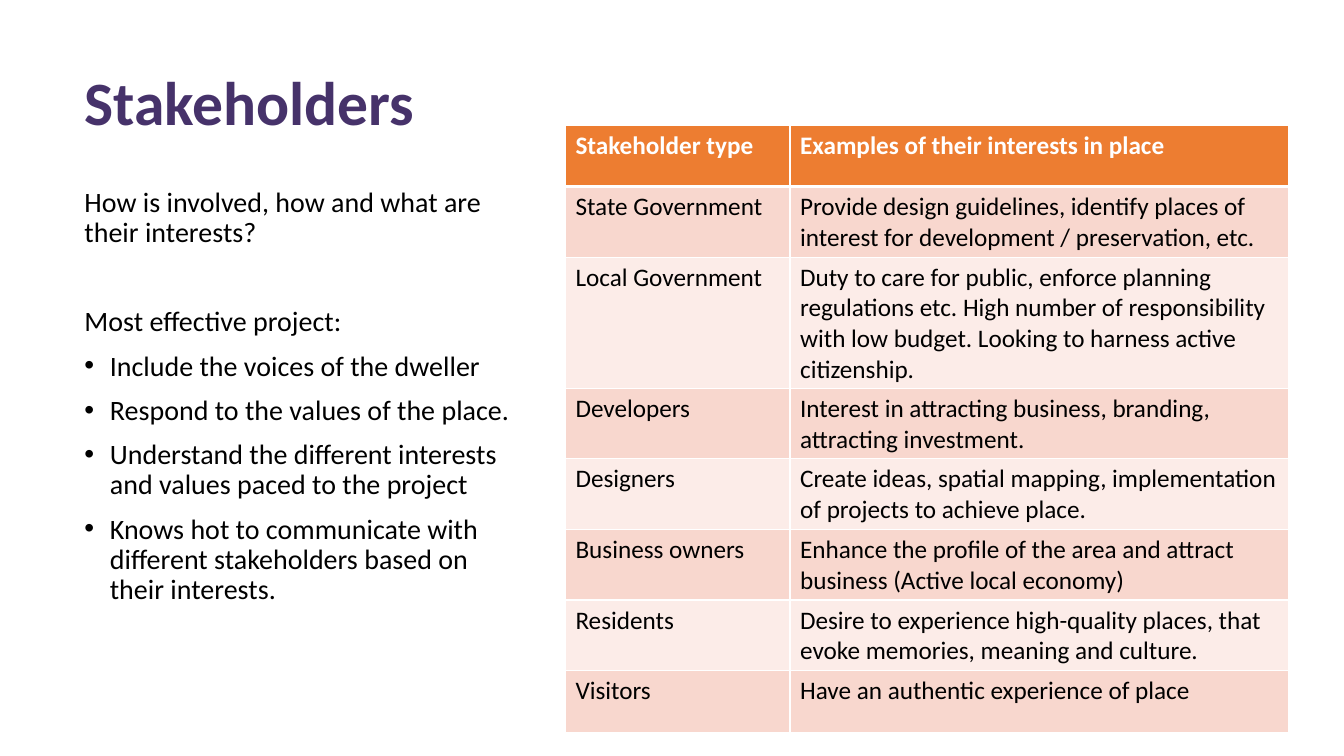
import pptx
import pptx.util
import pptx.dml.color
import pptx.enum.text
import pptx.oxml
import pptx.oxml.ns
from pptx.util import Cm

FONT = "Calibri"
TITLE = "Stakeholders"
# text, bulleted, space before in points
POINTS = [
    ("How is involved, how and what are their interests?", False, 0),
    ("Most effective project:", False, 42),
    ("Include the voices of the dweller", True, 10),
    ("Respond to the values of the place.", True, 10),
    ("Understand the different interests and values paced to the project", True, 10),
    ("Knows hot to communicate with different stakeholders based on their interests.", True, 10),
]
ROWS = [
    ("Stakeholder type", "Examples of their interests in place"),
    ("State Government", "Provide design guidelines, identify places of interest for "
                         "development / preservation, etc."),
    ("Local Government", "Duty to care for public, enforce planning regulations etc. "
                         "High number of responsibility with low budget. "
                         "Looking to harness active citizenship."),
    ("Developers", "Interest in attracting business, branding, attracting investment."),
    ("Designers", "Create ideas, spatial mapping, implementation of projects to achieve place."),
    ("Business owners", "Enhance the profile of the area and attract business "
                        "(Active local economy)"),
    ("Residents", "Desire to experience high-quality places, that evoke memories, "
                  "meaning and culture."),
    ("Visitors", "Have an authentic experience of place"),
]
COL_WIDTHS = (5.66, 12.57)
ROW_HEIGHT = 1.55
HEADER_FILL = "ED7D31"
BAND_FILLS = ("FCECE8", "F8D7CE")


def rgb(value):
    return pptx.dml.color.RGBColor.from_string(value)


def add_run(p, text, size, color, bold=False):
    r = p.add_run()
    r.text = text
    r.font.name = FONT
    r.font.size = pptx.util.Pt(size)
    r.font.bold = bold
    r.font.color.rgb = rgb(color)


def add_text_frame(s, left, top, width, height):
    tf = s.shapes.add_textbox(Cm(left), Cm(top), Cm(width), Cm(height)).text_frame
    tf.word_wrap = True
    return tf


def add_bullet(p):
    pPr = p._p.get_or_add_pPr()
    pPr.set("marL", str(Cm(0.64)))
    pPr.set("indent", str(-Cm(0.64)))
    ns = pptx.oxml.ns.nsdecls("a")
    pPr.append(pptx.oxml.parse_xml(f'<a:buFont {ns} typeface="Arial"/>'))
    pPr.append(pptx.oxml.parse_xml(f'<a:buChar {ns} char="•"/>'))


def add_borders(cell, **widths):
    """Draw white cell borders; widths in points are keyed by side, in L, R, T, B order."""
    tcPr = cell._tc.get_or_add_tcPr()
    for side, width in widths.items():
        tcPr.append(pptx.oxml.parse_xml(
            f'<a:ln{side} {pptx.oxml.ns.nsdecls("a")} w="{pptx.util.Pt(width)}">'
            '<a:solidFill><a:srgbClr val="FFFFFF"/></a:solidFill>'
            f'</a:ln{side}>'))


def add_title(s):
    tf = add_text_frame(s, 1.88, 1.73, 10.41, 1.88)
    tf.vertical_anchor = pptx.enum.text.MSO_ANCHOR.MIDDLE
    p = tf.paragraphs[0]
    p.line_spacing = 0.9
    add_run(p, TITLE, 44, "46326A", bold=True)


def add_points(s):
    tf = add_text_frame(s, 1.88, 4.62, 11.48, 13.28)
    for i, (text, bulleted, before) in enumerate(POINTS):
        p = tf.add_paragraph() if i else tf.paragraphs[0]
        if bulleted:
            add_bullet(p)
        p.line_spacing = 0.9
        p.space_before = pptx.util.Pt(before)
        add_run(p, text, 20, "000000")


def add_stakeholder_table(s):
    table = s.shapes.add_table(
        len(ROWS), len(COL_WIDTHS), Cm(14.25), Cm(3.15),
        Cm(sum(COL_WIDTHS)), Cm(ROW_HEIGHT * len(ROWS))).table
    for column, width in zip(table.columns, COL_WIDTHS):
        column.width = Cm(width)
    for i, texts in enumerate(ROWS):
        table.rows[i].height = Cm(ROW_HEIGHT)
        header = i == 0
        for j, text in enumerate(texts):
            cell = table.cell(i, j)
            add_borders(cell, L=1, R=1, T=3 if i == 1 else 1, B=3 if header else 1)
            cell.fill.solid()
            cell.fill.fore_color.rgb = rgb(HEADER_FILL if header else BAND_FILLS[i % 2])
            add_run(cell.text_frame.paragraphs[0], text, 18,
                    "FFFFFF" if header else "000000", bold=header)


def main():
    prs = pptx.Presentation()
    prs.slide_width, prs.slide_height = Cm(33.87), Cm(19.05)
    s = prs.slides.add_slide(prs.slide_layouts[6])
    add_title(s)
    add_points(s)
    add_stakeholder_table(s)
    prs.save("out.pptx")


if __name__ == "__main__":
    main()
